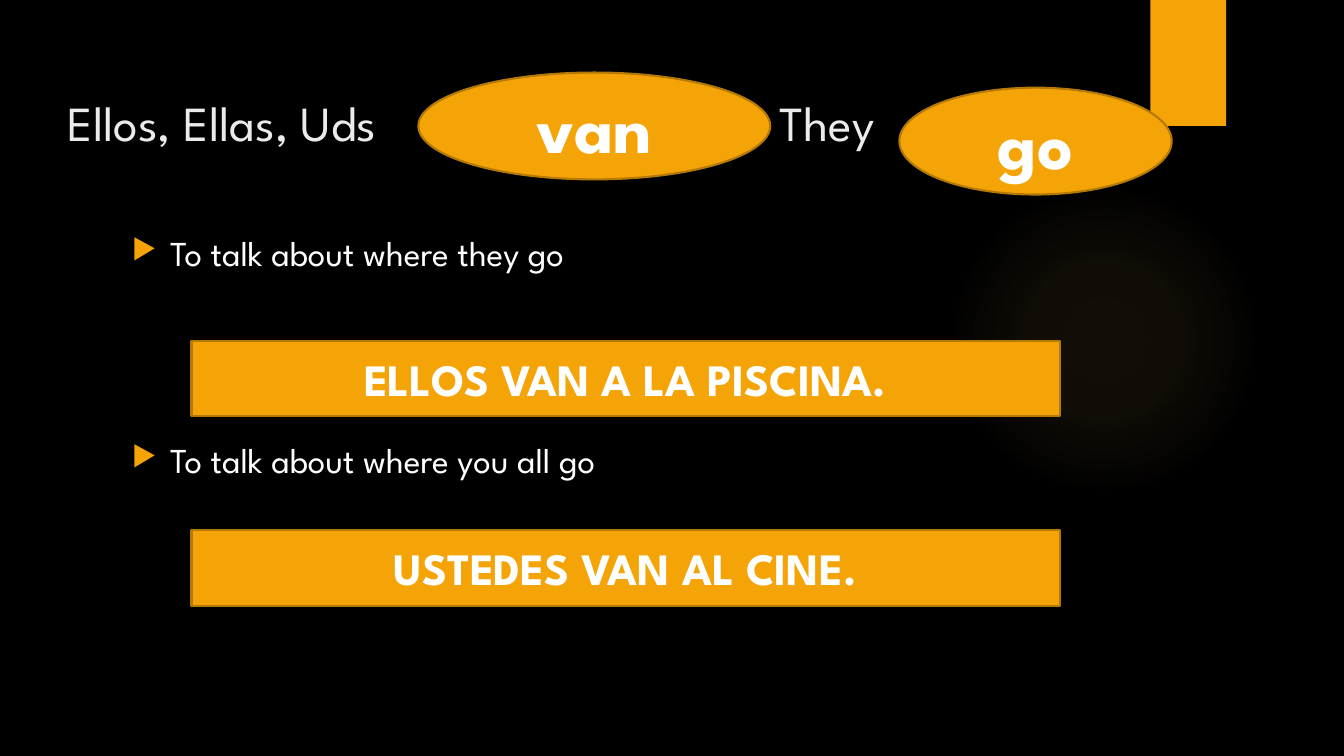
from dataclasses import dataclass

from pptx import Presentation
from pptx.dml.color import RGBColor
from pptx.enum.shapes import MSO_SHAPE
from pptx.enum.text import MSO_ANCHOR, PP_ALIGN
from pptx.oxml import parse_xml
from pptx.oxml.ns import nsdecls, qn
from pptx.shapes.autoshape import Shape
from pptx.slide import Slide
from pptx.text.text import _Paragraph as Para
from pptx.util import Inches, Pt

WIDE, HIGH = Inches(13.33), Inches(7.5)
FACE = "League Spartan"
HUES = {
    "back": "000000",
    "gold": "F5A408",
    "edge": "B57906",
    "glow": "FAC96A",
    "title": "EBEBEB",
    "text": "FFFFFF",
}


@dataclass
class Area:
    """Left, top, width and height in percent of the slide."""
    left: float
    top: float
    width: float
    height: float

    def place(self) -> tuple[int, int, int, int]:
        return (int(WIDE * self.left / 100), int(HIGH * self.top / 100),
                int(WIDE * self.width / 100), int(HIGH * self.height / 100))


@dataclass
class Label:
    kind: MSO_SHAPE
    area: Area
    text: str
    size: int


GLOW = Area(70.59, 24.4, 23.1, 41.07)
FLAG = Area(85.6, 0, 5.63, 16.67)
TITLE = Area(4.28, 11.6, 82.97, 10.27)
BODY = Area(9.08, 30, 73.37, 61.2)
LABELS = [
    Label(MSO_SHAPE.OVAL, Area(31.13, 9.6, 26.18, 14.13), "van", 50),
    Label(MSO_SHAPE.RECTANGLE, Area(14.25, 45.07, 64.59, 10), "ELLOS VAN A LA PISCINA.", 32),
    Label(MSO_SHAPE.RECTANGLE, Area(14.25, 70.13, 64.59, 10), "USTEDES VAN AL CINE.", 32),
    Label(MSO_SHAPE.OVAL, Area(66.92, 11.6, 20.26, 14.13), "go", 50),
]
POINTS = ["To talk about where they go", "To talk about where you all go"]
STOPS = [(0, 7), (36, 6), (69, 0)]  # position and opacity, percent


def hue(name: str) -> RGBColor:
    return RGBColor.from_string(HUES[name])


def style(para: Para, size: int, tint: str, bold: bool = False) -> None:
    font = para.font
    font.name, font.size, font.bold = FACE, Pt(size), bold
    font.color.rgb = hue(tint)


def add_form(slide: Slide, kind: MSO_SHAPE, area: Area) -> Shape:
    form = slide.shapes.add_shape(kind, *area.place())
    form.shadow.inherit = False
    form.fill.solid()
    form.fill.fore_color.rgb = hue("gold")
    form.line.fill.background()
    return form


def add_glow(slide: Slide) -> None:
    form = add_form(slide, MSO_SHAPE.OVAL, GLOW)
    stops = "".join(
        f'<a:gs pos="{pos * 1000}"><a:srgbClr val="{HUES["glow"]}">'
        f'<a:alpha val="{alpha * 1000}"/></a:srgbClr></a:gs>'
        for pos, alpha in STOPS)
    props = form._element.spPr
    props.replace(props.find(qn("a:solidFill")), parse_xml(
        f'<a:gradFill {nsdecls("a")}><a:gsLst>{stops}</a:gsLst><a:path path="circle">'
        '<a:fillToRect l="50000" t="50000" r="50000" b="50000"/></a:path></a:gradFill>'))


def add_label(slide: Slide, label: Label) -> None:
    form = add_form(slide, label.kind, label.area)
    form.line.color.rgb = hue("edge")
    form.line.width = Pt(1.5)
    frame = form.text_frame
    frame.word_wrap = True
    frame.vertical_anchor = MSO_ANCHOR.MIDDLE
    para = frame.paragraphs[0]
    para.text = label.text
    para.alignment = PP_ALIGN.CENTER
    style(para, label.size, "text", True)


def add_title(slide: Slide) -> None:
    frame = slide.shapes.add_textbox(*TITLE.place()).text_frame
    frame.word_wrap = True
    para = frame.paragraphs[0]
    para.text = "Ellos, Ellas, Uds\tThey"
    stop = int(WIDE * 0.53)
    para._p.get_or_add_pPr().append(parse_xml(
        f'<a:tabLst {nsdecls("a")}><a:tab pos="{stop}" algn="l"/></a:tabLst>'))
    style(para, 35, "title")


def add_body(slide: Slide) -> None:
    frame = slide.shapes.add_textbox(*BODY.place()).text_frame
    frame.word_wrap = True
    for rank, text in enumerate(POINTS):
        para = frame.add_paragraph() if rank else frame.paragraphs[0]
        para.text = text
        props = para._p.get_or_add_pPr()
        props.set("marL", str(Inches(0.38)))
        props.set("indent", str(-Inches(0.38)))
        for mark in (f'<a:buClr {nsdecls("a")}><a:srgbClr val="{HUES["gold"]}"/></a:buClr>',
                     f'<a:buSzPct {nsdecls("a")} val="80000"/>',
                     f'<a:buChar {nsdecls("a")} char="▶"/>'):
            props.append(parse_xml(mark))
        if rank:
            para.space_before = Pt(118)
        style(para, 25, "text")


def main() -> None:
    deck = Presentation()
    deck.slide_width, deck.slide_height = WIDE, HIGH
    slide = deck.slides.add_slide(deck.slide_layouts[6])
    slide.background.fill.solid()
    slide.background.fill.fore_color.rgb = hue("back")

    # Backdrop
    add_glow(slide)
    add_form(slide, MSO_SHAPE.RECTANGLE, FLAG)

    # Text
    add_title(slide)
    add_body(slide)

    # Verb forms and examples
    for label in LABELS:
        add_label(slide, label)

    deck.save("out.pptx")


if __name__ == "__main__":
    main()
